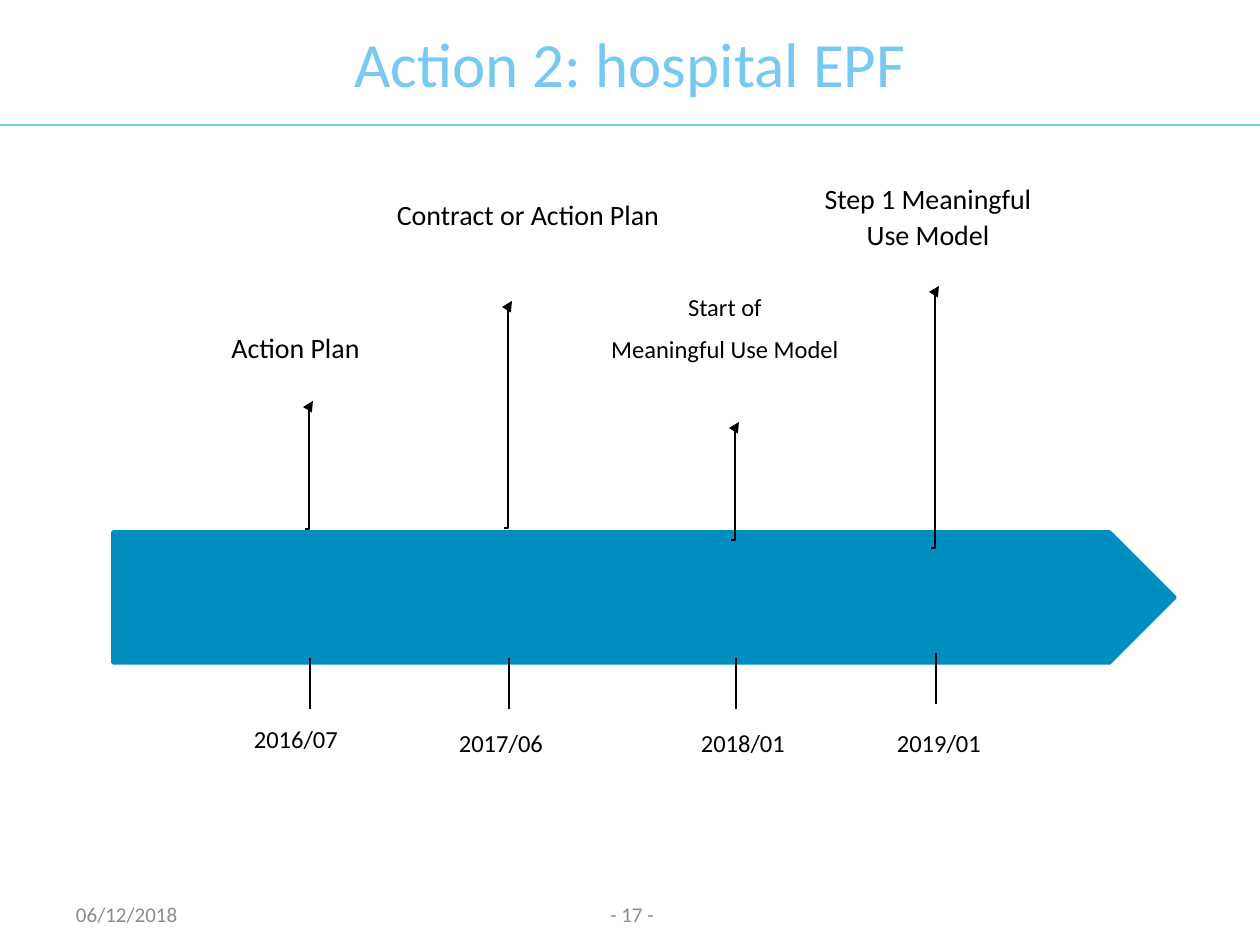
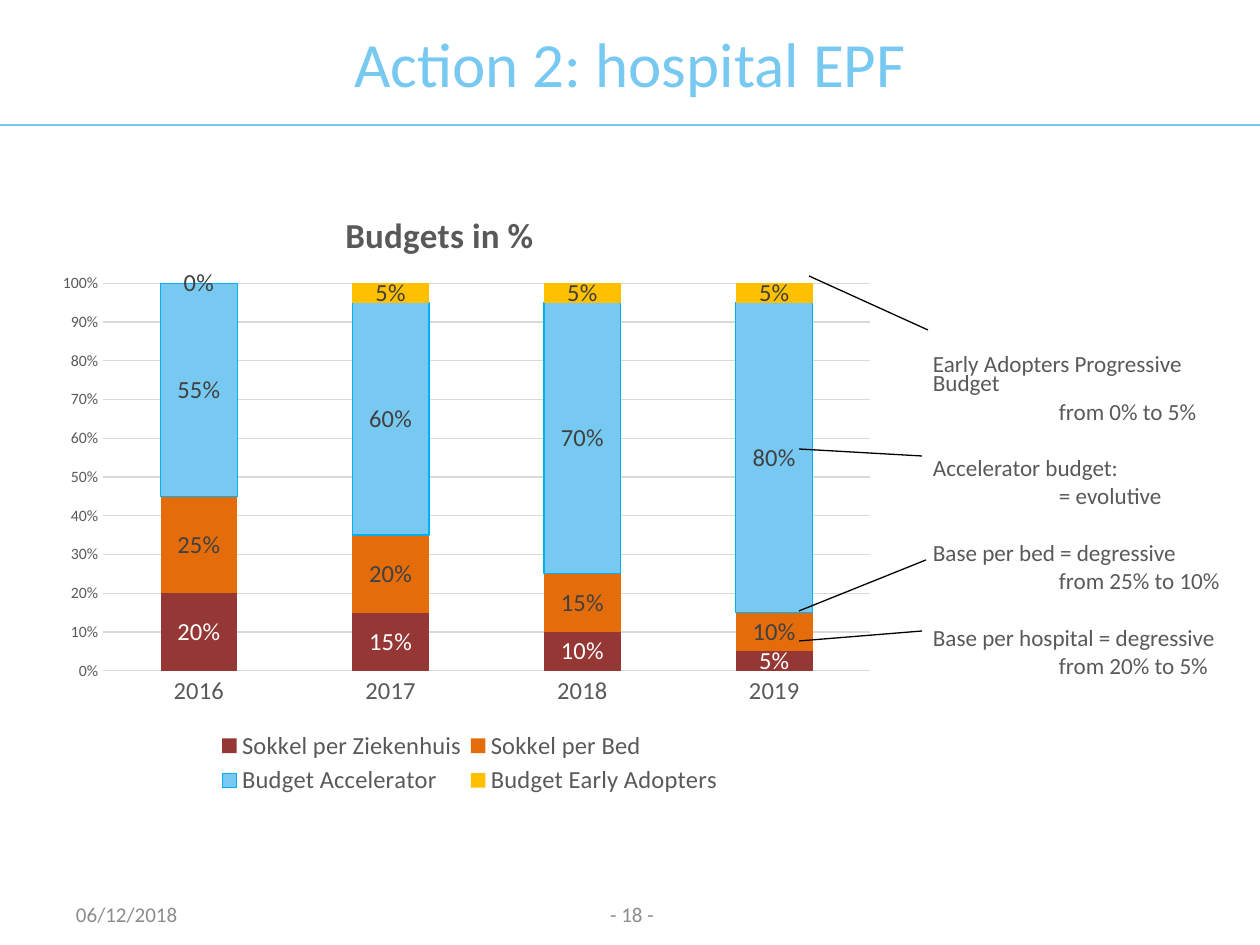
import pptx
import pptx.util
import pptx.oxml
import pptx.oxml.ns
import pptx.chart.data
import pptx.dml.color
import pptx.enum.chart
import pptx.enum.shapes
import pptx.enum.text

PX = pptx.util.Inches(1) / 126
FONT = "Calibri"
COLORS = {
    "sky": "77C9F2", "band": "008EC0", "black": "000000", "footer": "8C8C8C",
    "grey": "595959", "dark": "404040", "grid": "D9D9D9", "white": "FFFFFF",
    "maroon": "953735", "orange": "E46C0A", "cyan": "00B0F0", "yellow": "FFC000",
}
RGB = {name: pptx.dml.color.RGBColor.from_string(code) for name, code in COLORS.items()}
Pt = pptx.util.Pt
ALIGN = pptx.enum.text.PP_ALIGN
ANCHOR = pptx.enum.text.MSO_ANCHOR
CONNECTOR = pptx.enum.shapes.MSO_CONNECTOR


def add_text(slide, box, lines, size, color, align=ALIGN.CENTER, anchor=ANCHOR.MIDDLE,
             insets=(13, 6), line_spacing=1.0, space_after=0):
    frame = slide.shapes.add_textbox(*[int(v * PX) for v in box]).text_frame
    frame.word_wrap = True
    frame.vertical_anchor = anchor
    frame.margin_left = frame.margin_right = int(insets[0] * PX)
    frame.margin_top = frame.margin_bottom = int(insets[1] * PX)
    frame.text = "\n".join(lines)
    for paragraph in frame.paragraphs:
        paragraph.alignment = align
        paragraph.line_spacing = line_spacing
        paragraph.space_after = Pt(space_after)
        paragraph.font.name = FONT
        paragraph.font.size = Pt(size)
        paragraph.font.color.rgb = RGB[color]
    return frame


def add_line(slide, ends, color="black", width=0.75, kind=CONNECTOR.STRAIGHT, arrow=False):
    connector = slide.shapes.add_connector(kind, *[int(v * PX) for v in ends])
    connector.line.color.rgb = RGB[color]
    connector.line.width = Pt(width)
    properties = connector._element.spPr
    if arrow:
        outline = properties.find(pptx.oxml.ns.qn("a:ln"))
        pptx.oxml.ns.qn("a:tailEnd")
        outline.append(outline.makeelement(pptx.oxml.ns.qn("a:tailEnd"), {"type": "triangle"}))
    properties.append(properties.makeelement(pptx.oxml.ns.qn("a:effectLst"), {}))


deck = pptx.Presentation()
deck.slide_width = int(1260 * PX)
deck.slide_height = int(945 * PX)

# Shared title, rule and footer
slides = []
for number in (17, 18):
    slide = deck.slides.add_slide(deck.slide_layouts[6])
    add_line(slide, (0, 125, 1260, 125), "sky", 1.5)
    add_text(slide, (0, 0, 1260, 125), ["Action 2: hospital EPF"], 36, "sky")
    add_text(slide, (63, 889, 294, 50), ["06/12/2018"], 12, "footer", ALIGN.LEFT)
    add_text(slide, (485, 889, 294, 50), [f"- {number} -"], 12, "footer")
    slides.append(slide)
timeline, budgets = slides

# Timeline band
band = timeline.shapes.add_shape(pptx.enum.shapes.MSO_SHAPE.PENTAGON,
                                 *[int(v * PX) for v in (113, 532, 1062, 131)])
band.shadow.inherit = False
band.fill.solid()
band.fill.fore_color.rgb = RGB["band"]
band.line.color.rgb = RGB["band"]
band.line.width = Pt(2)

# Milestones: tick x and top, arrow bottom and top, date and its place, label, size and box
milestones = [
    (310, 658, 529, 401, "2016/07", (228, 717), ["Action Plan"], 16, (179, 323, 233, 79)),
    (509, 658, 528, 301, "2017/06", (433, 721), ["Contract or Action Plan"], 16,
     (380, 190, 296, 68)),
    (736, 658, 540, 422, "2018/01", (675, 721), ["Start of", "Meaningful Use Model"], 14,
     (592, 285, 266, 161)),
    (936, 653, 548, 286, "2019/01", (871, 721), ["Step 1 Meaningful Use Model"], 16,
     (795, 174, 266, 136)),
]
for tick_x, tick_y, bottom, top, date, date_at, label, size, label_box in milestones:
    add_line(timeline, (tick_x - 5, bottom, tick_x + 3, top), kind=CONNECTOR.ELBOW, arrow=True)
    add_line(timeline, (tick_x, tick_y, tick_x, tick_y + 51))
    for box, lines, points in (((*date_at, 136, 79), [date], 14), (label_box, label, size)):
        add_text(timeline, box, lines, points, "black", anchor=ANCHOR.TOP, insets=(9, 5),
                 line_spacing=1.07, space_after=6)

# Budget chart
shares = pptx.chart.data.CategoryChartData(number_format="0%")
shares.categories = ["2016", "2017", "2018", "2019"]
budget_lines = [
    ("Sokkel per Ziekenhuis", (0.2, 0.15, 0.1, 0.05), "maroon", "white"),
    ("Sokkel per Bed", (0.25, 0.2, 0.15, 0.1), "orange", "dark"),
    ("Budget Accelerator", (0.55, 0.6, 0.7, 0.8), "sky", "dark"),
    ("Budget Early Adopters", (0, 0.05, 0.05, 0.05), "yellow", "dark"),
]
for name, values, fill, label_color in budget_lines:
    shares.add_series(name, values)
chart = budgets.shapes.add_chart(pptx.enum.chart.XL_CHART_TYPE.COLUMN_STACKED,
                                 *[int(v * PX) for v in (44, 185, 843, 615)], shares).chart
chart.font.name = FONT
chart.font.size = Pt(10)
chart.font.color.rgb = RGB["black"]
plot = chart.plots[0]
plot.gap_width = 150
plot.overlap = 100
plot.vary_by_categories = False

chart.has_title = True
chart.chart_title.text_frame.text = "Budgets in %"
chart.has_legend = True
chart.legend.position = pptx.enum.chart.XL_LEGEND_POSITION.BOTTOM
chart.legend.include_in_layout = False
years, percents = chart.category_axis, chart.value_axis
heading = chart.chart_title.text_frame.paragraphs[0].font
heading.bold = True
for font, size in ((heading, 20), (chart.legend.font, 14),
                   (years.tick_labels.font, 14), (percents.tick_labels.font, 9)):
    font.name = FONT
    font.size = Pt(size)
    font.color.rgb = RGB["grey"]

for axis in (years, percents):
    axis.major_tick_mark = axis.minor_tick_mark = pptx.enum.chart.XL_TICK_MARK.NONE
percents.minimum_scale, percents.maximum_scale, percents.major_unit = 0, 1, 0.1
percents.tick_labels.number_format = "0%"
percents.tick_labels.number_format_is_linked = False
percents.format.line.fill.background()
percents.has_major_gridlines = True
for line in (years.format.line, percents.major_gridlines.format.line):
    line.color.rgb = RGB["grid"]
    line.width = Pt(0.75)

for series, (name, values, fill, label_color) in zip(plot.series, budget_lines):
    series.format.fill.solid()
    series.format.fill.fore_color.rgb = RGB[fill]
    if name == "Budget Accelerator":
        series.format.line.color.rgb = RGB["cyan"]
        series.format.line.width = Pt(0.75)
    else:
        series.format.line.fill.background()
    labels = series.data_labels
    labels.show_value = True
    labels.number_format = "0%"
    labels.number_format_is_linked = False
    labels.font.name = FONT
    labels.font.size = Pt(14)
    labels.font.color.rgb = RGB[label_color]

# Places of plot, title and legend as fractions of the chart
placements = [
    (chart._chartSpace.chart.plotArea, 0, {"x": 0.07, "y": 0.16, "w": 0.91, "h": 0.63}),
    (chart.chart_title._element, 1, {"x": 0.35, "y": 0.03}),
    (chart.legend._element, 1, {"x": 0.2, "y": 0.88, "w": 0.61, "h": 0.12}),
]
for part, position, place in placements:
    for old_layout in part.findall(pptx.oxml.ns.qn("c:layout")):
        part.remove(old_layout)
    target = '<c:layoutTarget val="inner"/>' if position == 0 else ""
    modes = "".join(f'<c:{key}Mode val="edge"/>' for key in "xy")
    sizes = "".join(f'<c:{key} val="{value}"/>' for key, value in place.items())
    part.insert(position, pptx.oxml.parse_xml(
        f'<c:layout {pptx.oxml.ns.nsdecls("c")}><c:manualLayout>{target}{modes}{sizes}'
        "</c:manualLayout></c:layout>"))

# Notes beside the chart: each heading is followed by an indented detail
notes = [
    ("Early Adopters Progressive Budget", "from 0% to 5%"),
    ("Accelerator budget:", "= evolutive"),
    ("Base per bed = degressive", "from 25% to 10%"),
    ("Base per hospital = degressive", "from 20% to 5%"),
]
note_frame = add_text(budgets, (857, 351, 402, 379), [text for note in notes for text in note],
                      13.2, "grey", ALIGN.LEFT, ANCHOR.TOP, line_spacing=0.7)
for index, paragraph in enumerate(note_frame.paragraphs):
    is_detail = index % 2
    paragraph._p.get_or_add_pPr().set("marL", str(int((189 if is_detail else 63) * PX)))
    if index:
        paragraph.space_before = Pt(5 if is_detail else 21.3)

# Leaders from the 2019 column to the notes
for ends in ((809, 276, 928, 330), (799, 449, 922, 456),
             (799, 611, 926, 560), (799, 641, 922, 631)):
    add_line(budgets, ends)

deck.save("out.pptx")
